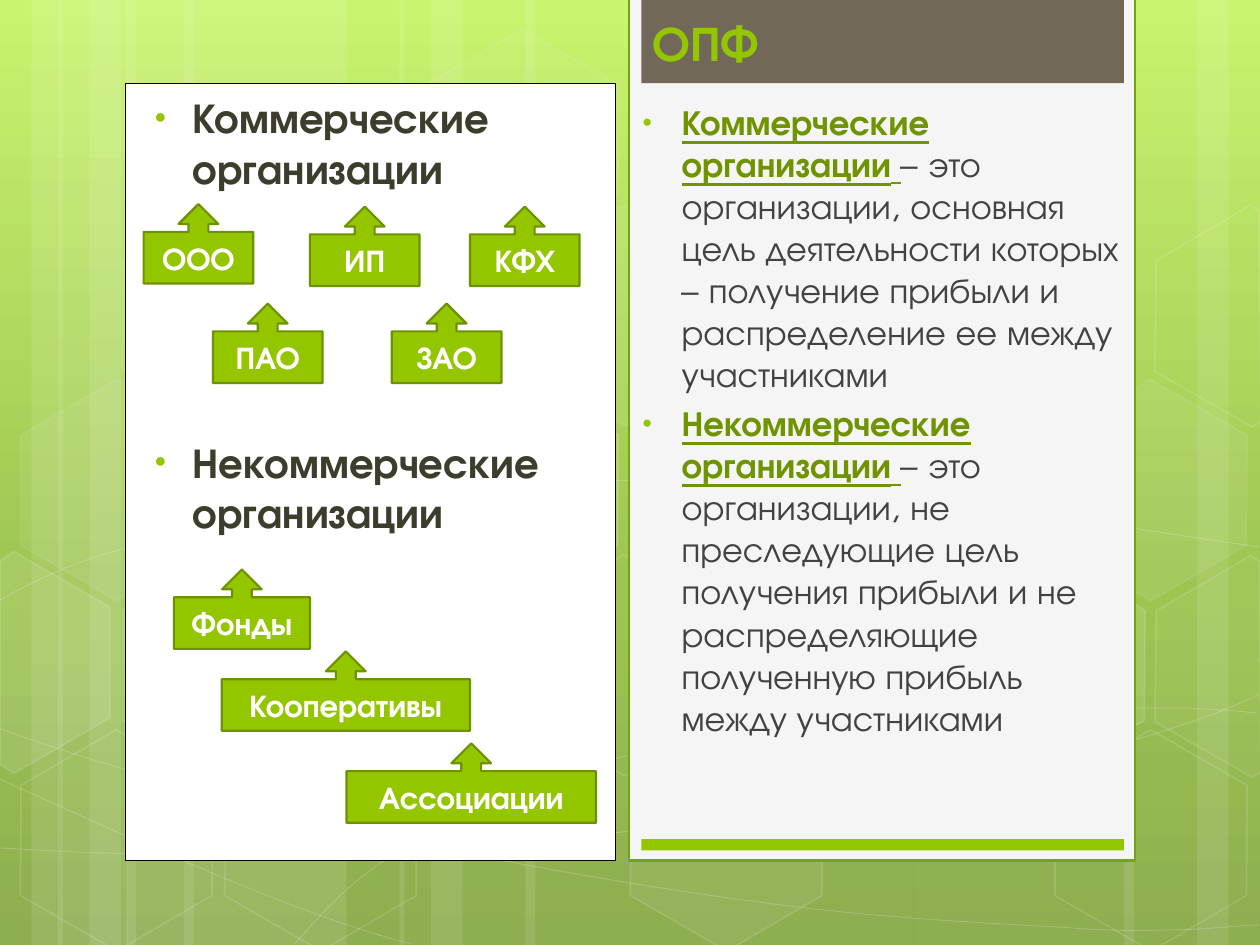
from copy import deepcopy
from math import cos, radians, sin

from lxml import etree
from pptx import Presentation
from pptx import util as u
from pptx.dml.color import RGBColor
from pptx.enum import shapes, text
from pptx.oxml.ns import qn

# ---- Theme ----
THEME = {
    "font": "TeX Gyre Adventor", "title": 28, "heading": 24, "body": 20, "label": 18,
    "green": "94C600", "edge": "6D9200", "frame": "74A510", "term": "6F9400",
    "ink": "3E3D2D", "text": "424242", "white": "FFFFFF", "black": "000000",
    "paper": "F5F5F5", "band": "71685A",
    "sky": [(0, "C3F35F"), (0.62, "93BF3F"), (1, "81A53E")],
}
WIDTH, HEIGHT = 10, 7.5

# ---- Content ----
TITLE = "ОПФ"
HEADINGS = ["Коммерческие организации", "Некоммерческие организации"]
MEANINGS = [
    "– это организации, основная цель деятельности которых – получение прибыли "
    "и распределение ее между участниками",
    "– это организации, не преследующие цель получения прибыли и не распределяющие "
    "полученную прибыль между участниками",
]
# top of the row, then (label, left, width)
CALLOUT_ROWS = [
    (1.62, [("ООО", 1.14, 0.87)]),
    (1.64, [("ИП", 2.46, 0.87), ("КФХ", 3.73, 0.87)]),
    (2.41, [("ПАО", 1.69, 0.87), ("ЗАО", 3.11, 0.87)]),
    (4.52, [("Фонды", 1.38, 1.08)]),
    (5.17, [("Кооперативы", 1.76, 1.97)]),
    (5.9, [("Ассоциации", 2.75, 1.98)]),
]
CALLOUT_HEIGHT = 0.63

# ---- Layout ----
BOXES = {"title": (5.08, 0, 3.86, 0.62), "left": (1.06, 0.68, 3.78, 6.14),
         "right": (5, 0.75, 4.02, 6.06)}
# box, fill, line colour, line width
PANELS = [
    ((4.99, -0.02, 4.02, 6.85), "paper", "frame", 1.25),
    ((5.09, -0.02, 3.83, 0.68), "band", None, 0),
    ((0.99, 0.66, 3.89, 6.17), "white", "black", 0.25),
    ((5.09, 6.66, 3.83, 0.09), "green", None, 0),
]

# ---- Backdrop ----
# rotation, then (left, width)
STRIPES = {
    0: [(1, 1.75), (0, 0.5), (0.25, 0.83), (1.46, 1.75), (0.46, 0.5), (0.71, 0.83),
        (4.17, 3.08), (3.17, 0.5), (3.42, 0.83)],
    180: [(7.25, 1.75), (9.5, 0.5), (8.92, 0.83)],
}
TILT = 30
HEX_SIZE, HEX_STEP, HEX_TOP = (1.75, 1.52), (0.81, 1.39), 0.35
# cluster left edge, then (column, row, fill opacity, line opacity)
HEXAGONS = {
    3.27: [(0, 2, 10, 12), (1, 3, 0, 12), (1, 1, 7, 8), (0, 0, 4, 8), (2, 4, 6, 12)],
    0.05: [(0, 4, 0, 12), (0, 2, 7, 8), (1, 3, 0, 12), (2, 4, 0, 12), (1, 1, 0, 12)],
    7.45: [(0, 3, 10, 12), (1, 4, 0, 12), (1, 2, 7, 8)],
}
RIGHT_CUT = [(9.18, 4.85), (9.93, 4.41), (10, 4.46), (10.01, 6.13), (9.94, 6.17), (9.17, 5.73)]
# corners, centre, fill opacity
CUT_HEXAGONS = [
    ([(0, 4.45), (0.11, 4.38), (0.87, 4.82), (0.87, 5.7), (0.11, 6.14), (0, 6.07)],
     (0.27, 5.35), 10),
    (RIGHT_CUT, (9.76, 5.2), 4),
    ([(x, y - 2.78) for x, y in RIGHT_CUT], (9.76, 2.42), 0),
]
# start point, then three Bezier points for each stretch
CURVES = [
    [(-0.01, 6.73), (0.53, 6.76), (1.07, 6.79), (1.82, 6.78), (2.57, 6.77), (3.49, 6.75),
     (4.49, 6.65), (5.5, 6.55), (6.92, 6.36), (7.83, 6.17), (8.75, 5.98), (9.68, 5.68),
     (9.99, 5.51)],
    [(-0.01, 4.77), (0.27, 4.61), (0.56, 4.46), (1.13, 4.31), (1.7, 4.16), (2.5, 3.94),
     (3.39, 3.87), (4.28, 3.8), (5.35, 3.79), (6.45, 3.87), (7.55, 3.95), (9.39, 4.26),
     (9.99, 4.34)],
    [(-0.03, 6.17), (1.18, 6.72), (2.39, 7.27), (3.26, 7.49)],
    [(-0.01, 5.78), (0.3, 5.89), (0.61, 6), (1.19, 6.16), (1.78, 6.31), (2.65, 6.56),
     (3.48, 6.73), (4.31, 6.9), (5.37, 7.08), (6.19, 7.18), (7.02, 7.29), (7.91, 7.33),
     (8.44, 7.36), (8.97, 7.4), (9.11, 7.38), (9.36, 7.38), (9.62, 7.37), (9.8, 7.35),
     (9.99, 7.34)],
    [(2.34, 7.49), (2.52, 7.29), (2.69, 7.09), (2.94, 6.91), (3.18, 6.73), (3.51, 6.53),
     (3.79, 6.39), (4.07, 6.25), (4.24, 6.19), (4.61, 6.09), (4.98, 5.99), (5.65, 5.85), (6, 5.78),
     (6.35, 5.71), (6.4, 5.71), (6.71, 5.69), (7.02, 5.66), (7.51, 5.63), (7.86, 5.62),
     (8.2, 5.61), (8.78, 5.62), (8.78, 5.62), (9, 5.62), (9.22, 5.62), (9.44, 5.62),
     (9.63, 5.63), (9.79, 5.64), (9.88, 5.65), (9.97, 5.66), (9.94, 5.65), (9.97, 5.66)],
]


def paint(fill, colour, opacity=100):
    if not colour or not opacity:
        fill.background()
        return
    fill.solid()
    fill.fore_color.rgb = RGBColor.from_string(THEME[colour])
    if opacity < 100:
        node = fill._xPr.find(".//" + qn("a:srgbClr"))
        etree.SubElement(node, qn("a:alpha"), val=str(opacity * 1000))


def style(shape, fill, line, width=0, fill_opacity=100, line_opacity=100):
    shape.shadow.inherit = False
    paint(shape.fill, fill, fill_opacity)
    paint(shape.line.fill, line, line_opacity)
    if line:
        shape.line.width = u.Pt(width)
    return shape


def add_box(slide, kind, box):
    return slide.shapes.add_shape(kind, *map(u.Inches, box))


def add_outline(slide, points, close):
    corners = [(u.Inches(x), u.Inches(y)) for x, y in points]
    builder = slide.shapes.build_freeform(*corners[0])
    builder.add_line_segments(corners[1:], close=close)
    return builder.convert_to_shape()


def add_curve(slide, points):
    """Join each three points after the start into one cubic Bezier stretch."""
    shape = add_outline(slide, points, False)
    lines = shape._element.findall(".//" + qn("a:lnTo"))
    for i in range(0, len(lines), 3):
        stretch = etree.SubElement(lines[i].getparent(), qn("a:cubicBezTo"))
        for line in lines[i:i + 3]:
            stretch.append(line[0])
            line.getparent().remove(line)
    return shape


def turn(points, centre, degrees):
    c, s = cos(radians(degrees)), sin(radians(degrees))
    offsets = [(x - centre[0], y - centre[1]) for x, y in points]
    return [(centre[0] + x * c - y * s, centre[1] + x * s + y * c) for x, y in offsets]


def add_run(paragraph, words, size, colour, bold=False, underline=False):
    run = paragraph.add_run()
    run.text = words
    values = {"name": THEME["font"], "size": u.Pt(THEME[size]), "bold": bold, "underline": underline}
    for name, value in values.items():
        setattr(run.font, name, value)
    run.font.color.rgb = RGBColor.from_string(THEME[colour])


def place(slide, holder, box, anchor):
    for name, value in zip(("left", "top", "width", "height"), box):
        setattr(holder, name, u.Inches(value))
    slide.shapes._spTree.append(holder._element)  # bring to front
    frame = holder.text_frame
    for name, value in {"word_wrap": True, "auto_size": text.MSO_AUTO_SIZE.NONE,
                        "vertical_anchor": anchor}.items():
        setattr(frame, name, value)
    return frame


def add_list(frame, items, margin, hanging, gap):
    for i, runs in enumerate(items):
        paragraph = frame.add_paragraph() if i else frame.paragraphs[0]
        paragraph.space_before = u.Pt(gap if i else 0)
        properties = paragraph._p.get_or_add_pPr()
        properties.set("marL", str(u.Inches(margin)))
        properties.set("indent", str(-u.Inches(hanging)))
        colour = etree.SubElement(properties, qn("a:buClr"))
        etree.SubElement(colour, qn("a:srgbClr"), val=THEME["green"])
        etree.SubElement(properties, qn("a:buSzPct"), val="76000")
        etree.SubElement(properties, qn("a:buChar"), char="•")
        for run in runs:
            add_run(paragraph, *run)


def add_backdrop(slide):
    fill = slide.background.fill
    fill.gradient()
    fill.gradient_angle = 270
    stops = slide._element.find(".//" + qn("a:gsLst"))
    stops.append(deepcopy(stops[-1]))
    for stop, (position, colour) in zip(fill.gradient_stops, THEME["sky"]):
        stop.position = position
        stop.color.rgb = RGBColor.from_string(colour)
    for rotation, stripes in STRIPES.items():
        for left, width in stripes:
            stripe = add_box(slide, shapes.MSO_SHAPE.RECTANGLE, (left, 0, width, HEIGHT))
            stripe.rotation = rotation
            style(stripe, "white", None, fill_opacity=10)
    for points in CURVES:
        style(add_curve(slide, points), None, "white", 0.5, line_opacity=20)
    for origin, cells in HEXAGONS.items():
        for column, row, *opacity in cells:
            corner = (origin + column * HEX_STEP[0], HEX_TOP + row * HEX_STEP[1])
            hexagon = add_box(slide, shapes.MSO_SHAPE.HEXAGON, corner + HEX_SIZE)
            hexagon.adjustments[0] = 0.285
            hexagon.rotation = TILT
            style(hexagon, "white", "white", 1, *opacity)
    for points, centre, opacity in CUT_HEXAGONS:
        hexagon = add_outline(slide, turn(points, centre, -TILT), True)
        hexagon.rotation = TILT
        style(hexagon, "white", "white", 1, opacity, 12)


def main():
    presentation = Presentation()
    presentation.slide_width, presentation.slide_height = u.Inches(WIDTH), u.Inches(HEIGHT)
    slide = presentation.slides.add_slide(presentation.slide_layouts[3])
    title, left, right = list(slide.placeholders)
    add_backdrop(slide)
    for box, *look in PANELS:
        style(add_box(slide, shapes.MSO_SHAPE.RECTANGLE, box), *look)

    # Headings and definitions
    top = text.MSO_ANCHOR.TOP
    add_list(place(slide, left, BOXES["left"], top),
             [[(words, "heading", "ink", True)] for words in HEADINGS], 0.37, 0.3, 139)
    add_list(place(slide, right, BOXES["right"], top),
             [[(term, "body", "term", True, True), (" ", "body", "term", False, True),
               (meaning, "body", "text")] for term, meaning in zip(HEADINGS, MEANINGS)],
             0.31, 0.31, 4)

    # Callouts
    for row_top, cells in CALLOUT_ROWS:
        for label, x, width in cells:
            callout = add_box(slide, shapes.MSO_SHAPE.UP_ARROW_CALLOUT,
                              (x, row_top, width, CALLOUT_HEIGHT))
            style(callout, "green", "edge", 1.25)
            callout.text_frame.vertical_anchor = text.MSO_ANCHOR.MIDDLE
            paragraph = callout.text_frame.paragraphs[0]
            paragraph.alignment = text.PP_ALIGN.CENTER
            add_run(paragraph, label, "label", "white", True)

    # Title
    paragraph = place(slide, title, BOXES["title"], text.MSO_ANCHOR.BOTTOM).paragraphs[0]
    paragraph.alignment = text.PP_ALIGN.LEFT
    add_run(paragraph, TITLE, "title", "green", True)
    presentation.save("out.pptx")


if __name__ == "__main__":
    main()
